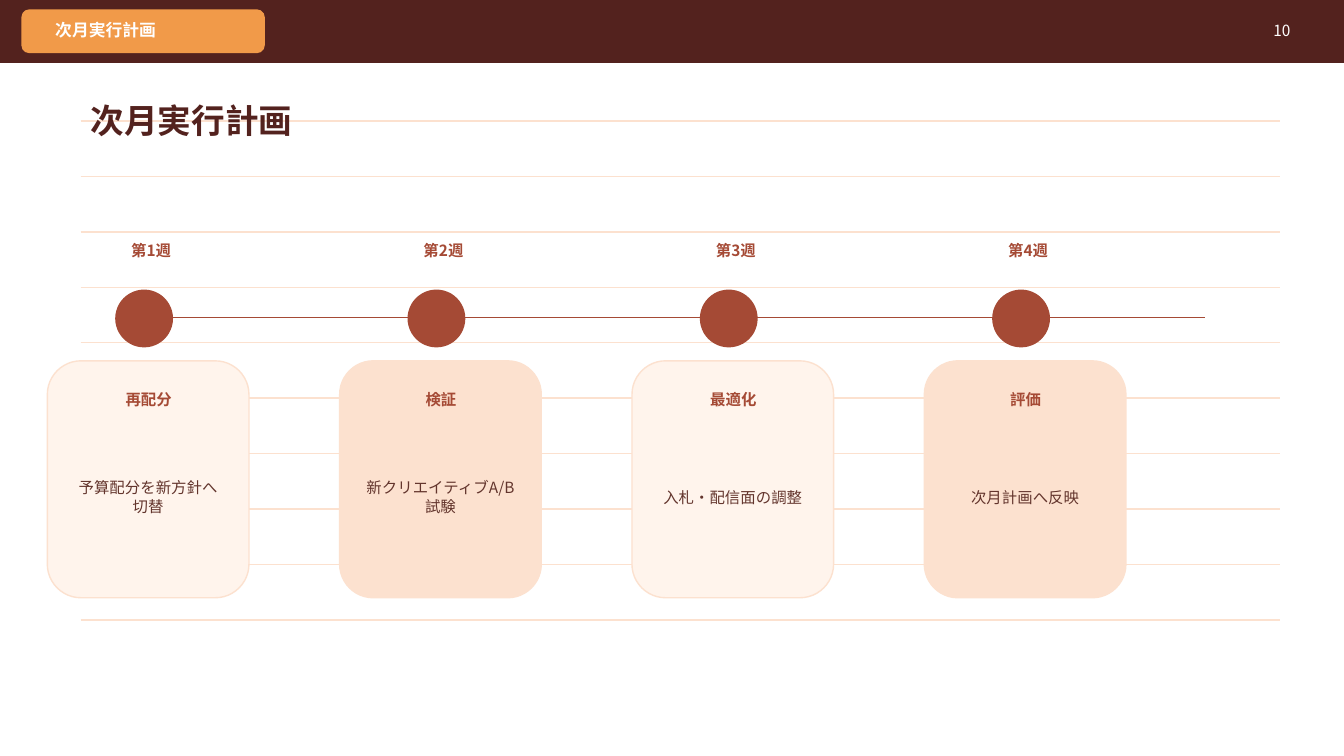
from dataclasses import dataclass
from typing import NamedTuple

from lxml import etree
from pptx import Presentation
from pptx import util as u
from pptx.dml.color import RGBColor
from pptx.enum import shapes, text
from pptx.oxml import ns


@dataclass(frozen=True)
class Theme:
    dark: str = "53221E"
    rust: str = "A54A35"
    brown: str = "63352D"
    gold: str = "F19A49"
    peach: str = "FCE1CF"
    cream: str = "FFF4EC"
    white: str = "FFFFFF"
    sans: str = "Noto Sans CJK JP"
    head: str = "Karla"
    small: int = 11
    tag: int = 12
    large: int = 24
    rule: int = 1


class Box(NamedTuple):
    """Left, top, width and height in grid cells."""
    x: float
    y: float
    w: float
    h: float


class Type(NamedTuple):
    size: int
    color: str
    bold: bool = False
    align: text.PP_ALIGN = text.PP_ALIGN.LEFT
    font: str = Theme.sans


class Week(NamedTuple):
    name: str
    goal: str
    task: str
    fill: str


T = Theme()
CELL = u.Inches(0.1)
COLS, ROWS = 133.33, 75
PITCH = 29
KIND = shapes.MSO_SHAPE
MID = text.PP_ALIGN.CENTER

LABEL = Type(T.small, T.rust, True, MID)
NOTE = Type(T.small, T.brown, False, MID)
WEEKS = [
    Week("第1週", "再配分", "予算配分を新方針へ切替", T.cream),
    Week("第2週", "検証", "新クリエイティブA/B試験", T.peach),
    Week("第3週", "最適化", "入札・配信面の調整", T.cream),
    Week("第4週", "評価", "次月計画へ反映", T.peach),
]


def cells(n: float) -> int:
    return round(n * CELL)


def rgb(code: str) -> RGBColor:
    return RGBColor.from_string(code)


def shape(slide, kind: KIND, box: Box, fill: str, edge: str) -> None:
    item = slide.shapes.add_shape(kind, *map(cells, box))
    item.shadow.inherit = False
    item.fill.solid()
    item.fill.fore_color.rgb = rgb(fill)
    item.line.color.rgb = rgb(edge)
    item.line.width = u.Pt(T.rule)


def rule(slide, left: float, right: float, y: float, color: str) -> None:
    ends = map(cells, (left, y, right, y))
    line = slide.shapes.add_connector(shapes.MSO_CONNECTOR.STRAIGHT, *ends)
    line.line.color.rgb = rgb(color)
    line.line.width = u.Pt(T.rule)
    etree.SubElement(line._element.spPr, ns.qn("a:effectLst"))


def write(item, words: str, style: Type) -> None:
    frame = item.text_frame
    frame.word_wrap = True
    frame.auto_size = text.MSO_AUTO_SIZE.NONE
    frame.vertical_anchor = text.MSO_ANCHOR.MIDDLE
    frame.text = words
    para = frame.paragraphs[0]
    para.alignment = style.align
    font = para.font
    font.size = u.Pt(style.size)
    font.bold = style.bold
    font.color.rgb = rgb(style.color)
    font.name = style.font
    # East Asian glyphs take the same typeface
    east = etree.SubElement(para._p.pPr.find(ns.qn("a:defRPr")), ns.qn("a:ea"))
    east.set("typeface", style.font)


def label(slide, box: Box, words: str, style: Type) -> None:
    write(slide.shapes.add_textbox(*map(cells, box)), words, style)


def title(slide, box: Box, words: str, style: Type) -> None:
    item = slide.shapes.title
    item.left, item.top, item.width, item.height = map(cells, box)
    write(item, words, style)
    # Bring the title in front of the ruled lines
    slide.shapes._spTree.append(item._element)


def stage(slide, week: Week, x: float) -> None:
    shape(slide, KIND.OVAL, Box(x + 6.8, 28.8, 5.6, 5.6), T.rust, T.rust)
    label(slide, Box(x + 5.8, 23.6, 9, 2.4), week.name, LABEL)
    shape(slide, KIND.ROUNDED_RECTANGLE, Box(x, 35.8, 20, 23.5),
          week.fill, T.peach)
    label(slide, Box(x + 2.3, 38.5, 15.5, 2.2), week.goal, LABEL)
    label(slide, Box(x + 1.4, 41.8, 17.2, 15), week.task, NOTE)


def main() -> None:
    deck = Presentation()
    deck.slide_width, deck.slide_height = cells(COLS), cells(ROWS)
    slide = deck.slides.add_slide(deck.slide_layouts[5])

    # Ruled background
    for i in range(10):
        rule(slide, 8, 127, 12 + 5.5 * i, T.peach)

    # Top bar
    shape(slide, KIND.RECTANGLE, Box(0, 0, COLS, 6.2), T.dark, T.dark)
    shape(slide, KIND.ROUNDED_RECTANGLE, Box(2.2, 1, 24, 4.2), T.gold, T.gold)
    label(slide, Box(4.5, 1.8, 88, 2.4), "次月実行計画",
          Type(T.tag, T.white, True))
    label(slide, Box(121.5, 1.8, 7.5, 2.4), "10",
          Type(T.small, T.white, align=text.PP_ALIGN.RIGHT))

    # Title
    title(slide, Box(8, 9.5, 114, 4.8), "次月実行計画",
          Type(T.large, T.dark, True, font=T.head))

    # Timeline
    rule(slide, 13.5, 119.5, 31.5, T.rust)
    for i, week in enumerate(WEEKS):
        stage(slide, week, 4.7 + PITCH * i)

    deck.save("out.pptx")


if __name__ == "__main__":
    main()
